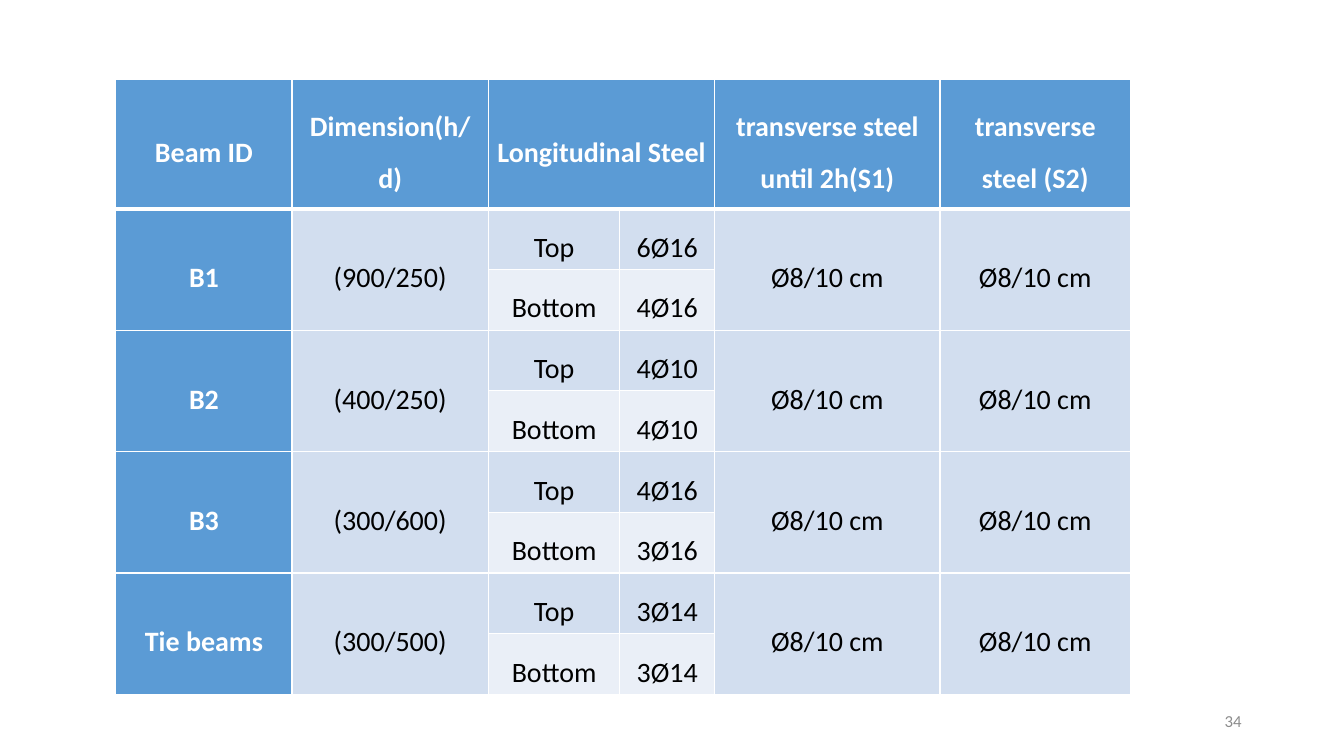
from lxml import etree
from pptx import Presentation
from pptx import util as u
from pptx.dml.color import RGBColor
from pptx.enum import text
from pptx.oxml import ns

FONT = "Calibri"
WHITE, BLACK, GREY = "FFFFFF", "000000", "8C8C8C"
BLUE, BAND, PALE = "5B9BD5", "D2DEEF", "EAEFF7"

COLUMN_WIDTHS = [4.44, 4.95, 3.31, 2.39, 5.68, 4.8]
HEADER_HEIGHT, BAR_HEIGHT = 3.25, 1.53
HEADINGS = ["Beam ID", "Dimension(h/d)", "Longitudinal Steel", None,
            "transverse steel until 2h(S1)", "transverse steel (S2)"]
STIRRUPS = "Ø8/10 cm"
BEAMS = [
    ("B1", "(900/250)", "6Ø16", "4Ø16"),
    ("B2", "(400/250)", "4Ø10", "4Ø10"),
    ("B3", "(300/600)", "4Ø16", "3Ø16"),
    ("Tie beams", "(300/500)", "3Ø14", "3Ø14"),
]


def colour(value):
    """Turn a hex string into a colour."""
    return RGBColor.from_string(value)


def add_run(paragraph, wording, size, tint, bold=False):
    """Add one formatted run to a paragraph."""
    run = paragraph.add_run()
    run.text = wording
    run.font.name = FONT
    run.font.size = u.Pt(size)
    run.font.bold = bold
    run.font.color.rgb = colour(tint)


def set_borders(cell, top, bottom):
    """Draw white cell borders, given the top and bottom widths in points."""
    properties = cell._tc.get_or_add_tcPr()
    sides = [("a:lnL", 1), ("a:lnR", 1), ("a:lnT", top), ("a:lnB", bottom)]
    for position, (side, width) in enumerate(sides):
        border = etree.Element(ns.qn(side), w=str(u.Pt(width)))
        fill = etree.SubElement(border, ns.qn("a:solidFill"))
        etree.SubElement(fill, ns.qn("a:srgbClr"), val=WHITE)
        properties.insert(position, border)


def fill_cell(cell, wording, background, strong):
    """Set the fill and centred wording of a cell."""
    cell.fill.solid()
    cell.fill.fore_color.rgb = colour(background)
    cell.vertical_anchor = text.MSO_ANCHOR.MIDDLE
    cell.margin_left = cell.margin_right = u.Cm(0.18)
    cell.margin_top = cell.margin_bottom = 0
    if wording:
        paragraph = cell.text_frame.paragraphs[0]
        paragraph.alignment = text.PP_ALIGN.CENTER
        paragraph.line_spacing = 1.5
        add_run(paragraph, wording, 20, WHITE if strong else BLACK, strong)


def add_beam_schedule(slide, left, top):
    """Place the beam reinforcement table with its top left corner at the given point."""
    rows = [HEADINGS]
    for beam, dimension, top_bars, bottom_bars in BEAMS:
        rows.append([beam, dimension, "Top", top_bars, STIRRUPS, STIRRUPS])
        rows.append([None, None, "Bottom", bottom_bars, None, None])
    heights = [HEADER_HEIGHT] + [BAR_HEIGHT] * (len(rows) - 1)
    schedule = slide.shapes.add_table(
        len(rows), len(COLUMN_WIDTHS), u.Cm(left), u.Cm(top),
        u.Cm(sum(COLUMN_WIDTHS)), u.Cm(sum(heights))).table
    for column, width in zip(schedule.columns, COLUMN_WIDTHS):
        column.width = u.Cm(width)
    for row, height in zip(schedule.rows, heights):
        row.height = u.Cm(height)

    for r, wordings in enumerate(rows):
        for c, wording in enumerate(wordings):
            strong = r == 0 or c == 0
            lower_bar = r > 0 and r % 2 == 0 and c in (2, 3)
            background = BLUE if strong else PALE if lower_bar else BAND
            cell = schedule.cell(r, c)
            fill_cell(cell, wording, background, strong)
            set_borders(cell, 3 if r == 1 else 1, 3 if r == 0 else 1)

    schedule.cell(0, 2).merge(schedule.cell(0, 3))
    for r in range(1, len(rows), 2):
        for c in (0, 1, 4, 5):
            schedule.cell(r, c).merge(schedule.cell(r + 1, c))


def add_page_number(slide, left, top, width, height):
    """Place the right-aligned page number in the given box."""
    box = slide.shapes.add_textbox(u.Cm(left), u.Cm(top), u.Cm(width), u.Cm(height))
    frame = box.text_frame
    frame.word_wrap = True
    frame.vertical_anchor = text.MSO_ANCHOR.MIDDLE
    paragraph = frame.paragraphs[0]
    paragraph.alignment = text.PP_ALIGN.RIGHT
    add_run(paragraph, "34", 12, GREY)


def main():
    """Build and save the slide."""
    deck = Presentation()
    deck.slide_width, deck.slide_height = u.Cm(33.87), u.Cm(19.05)
    slide = deck.slides.add_slide(deck.slide_layouts[6])
    add_page_number(slide, 23.92, 17.66, 7.62, 1.01)
    add_beam_schedule(slide, 2.92, 2.01)
    deck.save("out.pptx")


if __name__ == "__main__":
    main()
